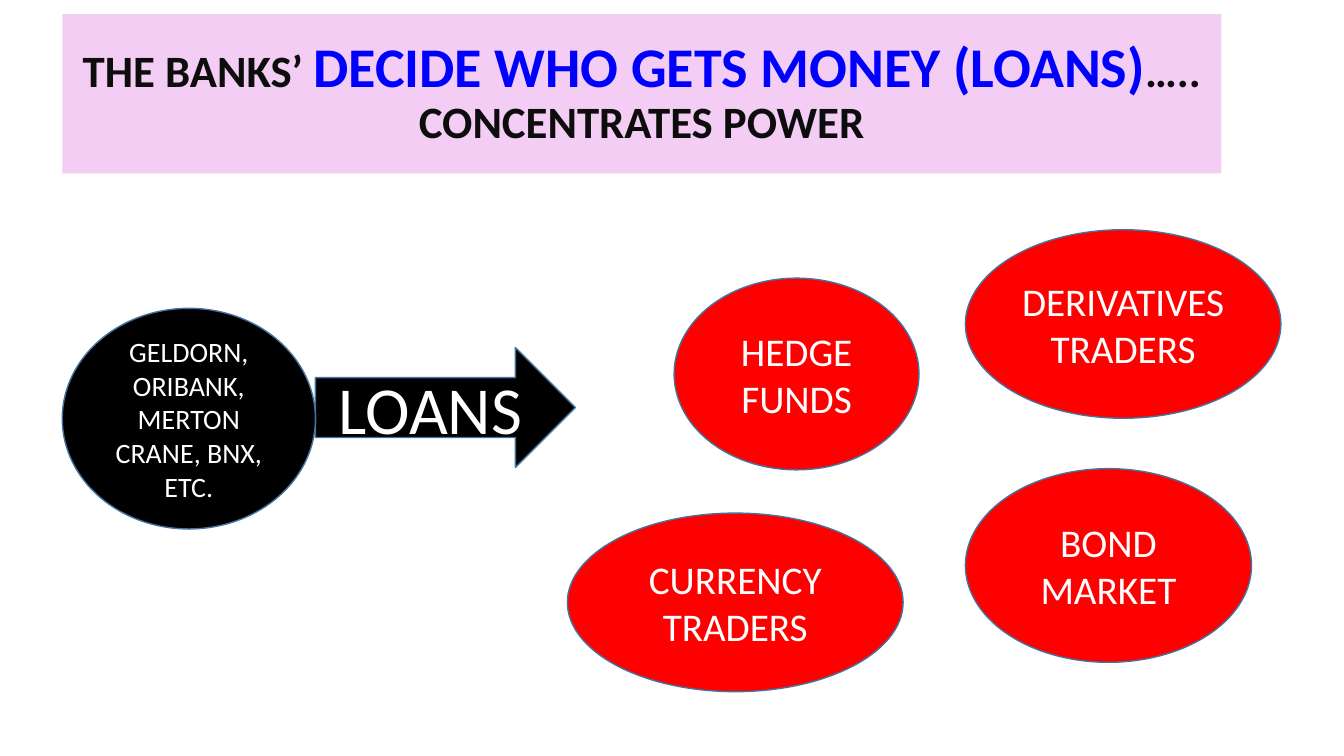
"""Build a slide on how bank loans concentrate power."""
from typing import NamedTuple

from pptx import Presentation
from pptx.dml.color import RGBColor
from pptx.enum.shapes import MSO_SHAPE
from pptx.enum.text import MSO_ANCHOR, PP_ALIGN
from pptx.util import Cm, Pt


class Run(NamedTuple):
    text: str
    size: float
    color: str = "FFFFFF"
    bold: bool = False


class Node(NamedTuple):
    kind: MSO_SHAPE
    left: float
    top: float
    width: float
    height: float
    fill: str
    lines: list[list[Run]]
    edge: str = "43739E"
    space: float = 1.0


def rgb(code: str) -> RGBColor:
    return RGBColor.from_string(code)


def add_run(para, text: str, *, size: float, color: str, bold: bool) -> None:
    run = para.add_run()
    run.text = text
    font = run.font
    font.name = "Calibri"
    font.size = Pt(size)
    font.bold = bold
    font.color.rgb = rgb(color)


def draw(slide, node: Node) -> None:
    box = Cm(node.left), Cm(node.top), Cm(node.width), Cm(node.height)
    shape = slide.shapes.add_shape(node.kind, *box)
    shape.shadow.inherit = False
    shape.fill.solid()
    shape.fill.fore_color.rgb = rgb(node.fill)
    if node.edge:
        shape.line.color.rgb = rgb(node.edge)
        shape.line.width = Pt(1)
    else:
        shape.line.fill.background()
    frame = shape.text_frame
    frame.word_wrap = True
    frame.vertical_anchor = MSO_ANCHOR.MIDDLE
    for index, line in enumerate(node.lines):
        para = frame.add_paragraph() if index else frame.paragraphs[0]
        para.alignment = PP_ALIGN.CENTER
        para.line_spacing = node.space
        for run in line:
            add_run(para, run.text, size=run.size, color=run.color, bold=run.bold)


def trader(left: float, top: float, width: float, height: float, *lines: str) -> Node:
    text = [[Run(line, 28)] for line in lines]
    return Node(MSO_SHAPE.OVAL, left, top, width, height, "FF0000", text)


DARK = "0D0D0D"
TITLE = [
    [
        Run("THE BANKS’ ", 32, DARK, True),
        Run("DECIDE WHO GETS MONEY (LOANS)", 40, "0000FF", True),
        Run("…..", 32, DARK, True),
    ],
    [Run("CONCENTRATES POWER", 32, DARK, True)],
]
BANKS = [[Run("GELDORN, ORIBANK, MERTON CRANE, BNX, ETC.", 20)]]
NODES = [
    Node(MSO_SHAPE.RIGHT_ARROW, 7.95, 8.76, 6.55, 3.02, "000000", [[Run("LOANS", 48)]]),
    Node(MSO_SHAPE.OVAL, 1.57, 7.77, 6.38, 5.56, "000000", BANKS),
    trader(16.99, 7.01, 6.17, 4.83, "HEDGE FUNDS"),
    trader(24.33, 5.79, 7.95, 4.75, "DERIVATIVES", "TRADERS"),
    trader(14.3, 12.93, 8.46, 4.5, "CURRENCY", "TRADERS"),
    trader(24.33, 11.81, 7.21, 4.88, "BOND MARKET"),
    Node(MSO_SHAPE.RECTANGLE, 1.57, 0.36, 29.21, 4.01, "F3CDF3", TITLE, "", 0.9),
]


def main() -> None:
    deck = Presentation()
    deck.slide_width = Cm(33.87)
    deck.slide_height = Cm(19.05)
    slide = deck.slides.add_slide(deck.slide_layouts[6])
    for node in NODES:
        draw(slide, node)
    deck.save("out.pptx")


if __name__ == "__main__":
    main()
